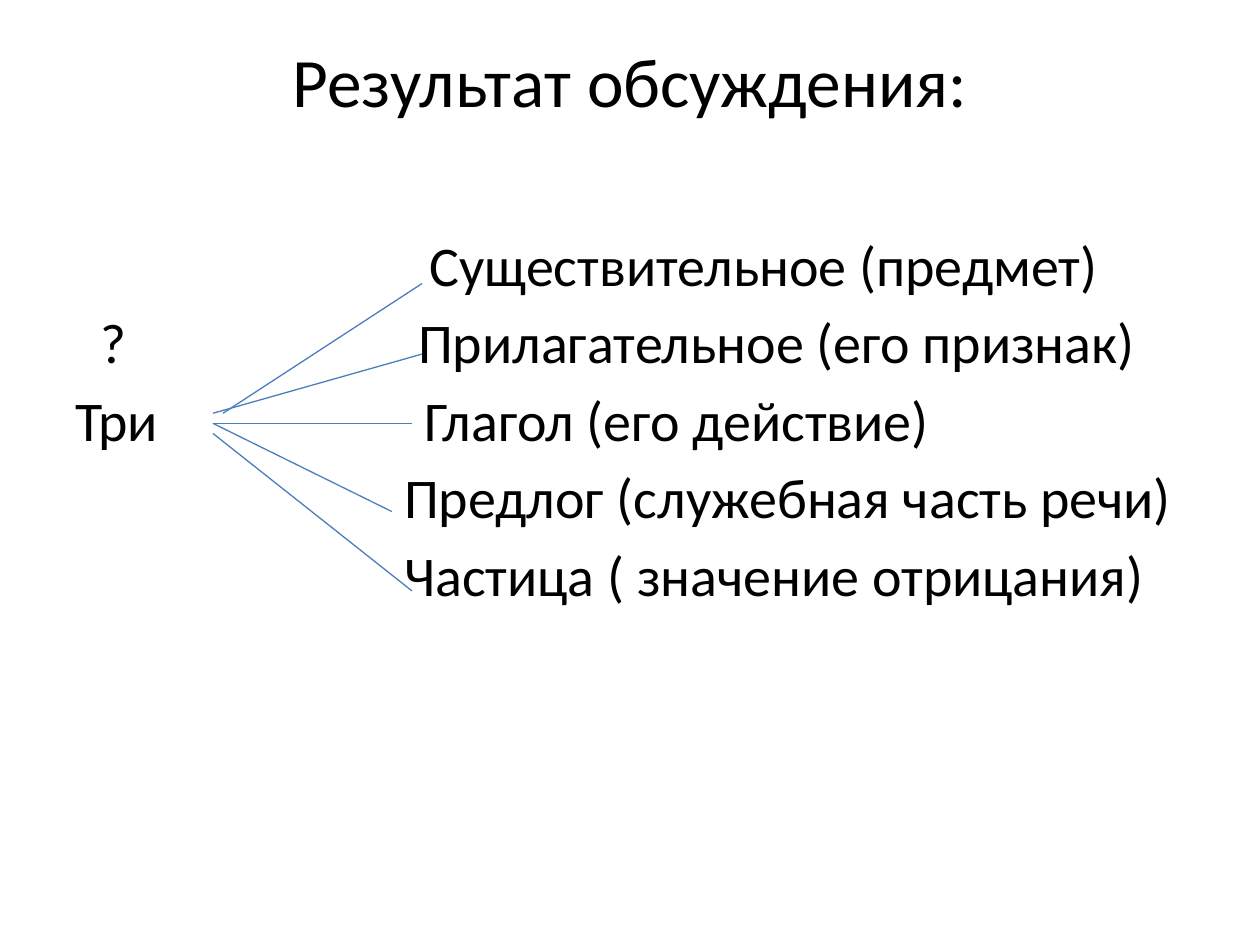
from lxml import etree
from pptx import Presentation
from pptx.dml.color import RGBColor
from pptx.enum.shapes import MSO_CONNECTOR
from pptx.enum.text import MSO_ANCHOR, PP_ALIGN
from pptx.oxml.ns import qn
from pptx.util import Inches, Pt

STRAIGHT = MSO_CONNECTOR.STRAIGHT
TOP, CENTER, LEFT = MSO_ANCHOR.TOP, PP_ALIGN.CENTER, PP_ALIGN.LEFT
BLACK = RGBColor(0x00, 0x00, 0x00)
BLUE = RGBColor(0x4B, 0x7E, 0xBC)
FONT = "Calibri"

TITLE = "Результат обсуждения:"
ROWS = [
    ("\tСуществительное (предмет)", [2.81]),
    ("\t?\tПрилагательное (его признак)", [0.2, 2.72]),
    ("Три\tГлагол (его действие)", [2.77]),
    ("\tПредлог (служебная часть речи)", [2.61]),
    ("\tЧастица ( значение отрицания)", [2.61]),
]
RAYS = [
    ((1.77, 3.28), (3.35, 2.25)),
    ((1.69, 3.28), (3.35, 2.81)),
    ((1.69, 3.36), (3.27, 3.36)),
    ((1.69, 3.36), (3.11, 4.06)),
    ((1.69, 3.44), (3.27, 4.69)),
]


def add_text(paragraph, text, size, alignment):
    paragraph.alignment = alignment
    run = paragraph.add_run()
    run.text = text
    run.font.name = FONT
    run.font.size = Pt(size)
    run.font.color.rgb = BLACK


def set_tabs(paragraph, stops):
    properties = paragraph._p.get_or_add_pPr()
    tabs = etree.SubElement(properties, qn("a:tabLst"))
    for stop in stops:
        etree.SubElement(tabs, qn("a:tab"), pos=str(Inches(stop)), algn="l")


def add_ray(slide, start, end):
    points = [Inches(value) for value in start + end]
    ray = slide.shapes.add_connector(STRAIGHT, *points)
    ray.line.color.rgb = BLUE
    ray.line.width = Pt(0.75)
    etree.SubElement(ray._element.spPr, qn("a:effectLst"))


def main():
    presentation = Presentation()
    presentation.slide_width = Inches(10)
    presentation.slide_height = Inches(7.5)
    slide = presentation.slides.add_slide(presentation.slide_layouts[5])

    title = slide.shapes.title
    title.left, title.top = Inches(0.5), Inches(0.3)
    title.width, title.height = Inches(9), Inches(1.25)
    title.text_frame.vertical_anchor = TOP
    title.text_frame.margin_top = 0
    add_text(title.text_frame.paragraphs[0], TITLE, 39.6, CENTER)

    body = slide.shapes.add_textbox(Inches(0.5), Inches(1.78), Inches(9), Inches(4.92))
    frame = body.text_frame
    frame.word_wrap = True
    for index, (text, stops) in enumerate(ROWS):
        paragraph = frame.add_paragraph() if index else frame.paragraphs[0]
        paragraph.space_before = Pt(5.8)
        add_text(paragraph, text, 32, LEFT)
        set_tabs(paragraph, stops)

    for start, end in RAYS:
        add_ray(slide, start, end)

    presentation.save("out.pptx")


if __name__ == "__main__":
    main()
